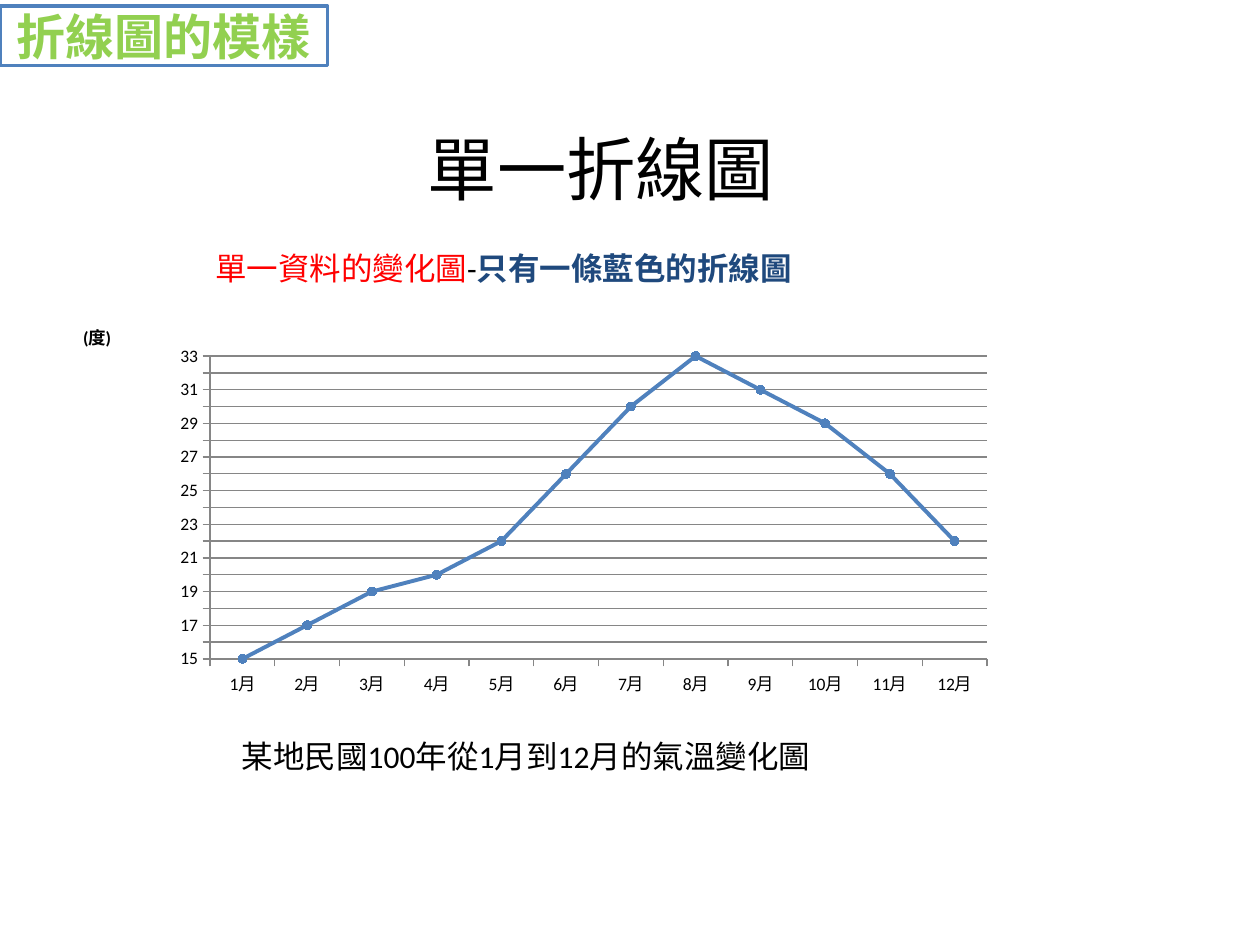
from dataclasses import dataclass

from lxml import etree
from pptx import Presentation
from pptx.chart.data import CategoryChartData
from pptx.dml.color import RGBColor
from pptx.enum.chart import XL_CHART_TYPE, XL_LEGEND_POSITION, XL_MARKER_STYLE, XL_TICK_MARK
from pptx.enum.shapes import MSO_SHAPE
from pptx.enum.text import MSO_ANCHOR, MSO_AUTO_SIZE, PP_ALIGN
from pptx.oxml.ns import qn
from pptx.util import Inches, Pt

LINE_MARKERS = XL_CHART_TYPE.LINE_MARKERS
CIRCLE = XL_MARKER_STYLE.CIRCLE
OUTSIDE = XL_TICK_MARK.OUTSIDE
RECTANGLE = MSO_SHAPE.RECTANGLE
TOP, MIDDLE = MSO_ANCHOR.TOP, MSO_ANCHOR.MIDDLE
NO_FIT, GROW = MSO_AUTO_SIZE.NONE, MSO_AUTO_SIZE.SHAPE_TO_FIT_TEXT
CENTER = PP_ALIGN.CENTER


@dataclass(frozen=True)
class Theme:
    font: str = "Calibri"
    label_font: str = "Noto Sans CJK JP"
    black: RGBColor = RGBColor(0, 0, 0)
    white: RGBColor = RGBColor(255, 255, 255)
    red: RGBColor = RGBColor(255, 0, 0)
    navy: RGBColor = RGBColor(0x1F, 0x49, 0x7D)
    blue: RGBColor = RGBColor(0x4F, 0x81, 0xBD)
    green: RGBColor = RGBColor(0x92, 0xD0, 0x50)
    gray: RGBColor = RGBColor(0x86, 0x86, 0x86)
    title: float = 39.6
    label: float = 28
    body: float = 18
    axis: float = 10


THEME = Theme()
TEMPERATURES = [15, 17, 19, 20, 22, 26, 30, 33, 31, 29, 26, 22]
MONTHS = [f"{month}月" for month in range(1, 13)]


def box(*lengths):
    return [Inches(length) for length in lengths]


def format_font(font, size, color, bold=False, name=THEME.font):
    for key, value in {"size": Pt(size), "bold": bold, "name": name}.items():
        setattr(font, key, value)
    font.color.rgb = color


def add_run(p, text, size, color, **options):
    r = p.add_run()
    r.text = text
    format_font(r.font, size, color, **options)


def format_frame(tf, **values):
    for key, value in {"word_wrap": True, **values}.items():
        setattr(tf, key, value)


def format_line(line, color, width):
    line.color.rgb = color
    line.width = Pt(width)


def set_title(s, text):
    sp = s.shapes.title
    sp.left, sp.top, sp.width, sp.height = box(0.27, 0.44, 9, 1.25)
    format_frame(sp.text_frame, auto_size=NO_FIT, vertical_anchor=TOP,
                 margin_top=Inches(0.56), margin_bottom=0)
    p = sp.text_frame.paragraphs[0]
    p.alignment = CENTER
    add_run(p, text, THEME.title, THEME.black)


def add_text(s, place, runs):
    tf = s.shapes.add_textbox(*box(*place)).text_frame
    format_frame(tf, auto_size=GROW)
    for text, color, bold in runs:
        add_run(tf.paragraphs[0], text, THEME.body, color, bold=bold)


def add_label(s, place, text):
    sp = s.shapes.add_shape(RECTANGLE, *box(*place))
    sp.shadow.inherit = False
    sp.fill.solid()
    sp.fill.fore_color.rgb = THEME.white
    format_line(sp.line, THEME.blue, 2)
    format_frame(sp.text_frame, vertical_anchor=MIDDLE)
    p = sp.text_frame.paragraphs[0]
    p.alignment = CENTER
    add_run(p, text, THEME.label, THEME.green, bold=True, name=THEME.label_font)


def set_layout(parent, index, values):
    """Give a chart part a manual layout as fractions of the chart."""
    for old in parent.findall(qn("c:layout")):
        parent.remove(old)
    layout = etree.Element(qn("c:layout"))
    manual = etree.SubElement(layout, qn("c:manualLayout"))
    for tag, value in values.items():
        etree.SubElement(manual, qn(f"c:{tag}")).set("val", str(value))
    parent.insert(index, layout)


def add_axis_title(axis, text):
    title = axis.axis_title
    p = title.text_frame.paragraphs[0]
    add_run(p, text, THEME.axis, THEME.black, bold=True)
    body = next(title.element.iter(qn("a:bodyPr")))
    body.set("rot", "0")
    body.set("vert", "horz")
    set_layout(title.element, 1,
               {"xMode": "edge", "yMode": "edge", "x": 0.02, "y": 0.04})


def add_temperature_chart(s, place):
    data = CategoryChartData()
    data.categories = MONTHS
    data.add_series("Series 1", TEMPERATURES)
    chart = s.shapes.add_chart(LINE_MARKERS, *box(*place), data).chart
    chart.has_legend = False
    chart.has_title = False
    format_font(chart.font, THEME.axis, THEME.black)

    # Axes
    for axis in (chart.category_axis, chart.value_axis):
        axis.major_tick_mark = OUTSIDE
        format_line(axis.format.line, THEME.gray, 0.75)
    axis = chart.value_axis
    scale = {"minimum_scale": 15, "maximum_scale": 33, "major_unit": 1,
             "has_major_gridlines": True}
    for key, value in scale.items():
        setattr(axis, key, value)
    format_line(axis.major_gridlines.format.line, THEME.gray, 0.75)
    add_axis_title(axis, "(度)")

    # Plot and series
    plot_area = next(chart.element.iter(qn("c:plotArea")))
    set_layout(plot_area, 0, {
        "layoutTarget": "inner", "xMode": "edge", "yMode": "edge",
        "x": 0.146, "y": 0.131, "w": 0.752, "h": 0.756})
    chart.plots[0].vary_by_categories = False
    series = chart.plots[0].series[0]
    series.smooth = False
    format_line(series.format.line, THEME.blue, 2.25)
    marker = series.marker
    marker.style, marker.size = CIRCLE, 5
    marker.format.fill.solid()
    marker.format.fill.fore_color.rgb = THEME.blue
    format_line(marker.format.line, THEME.blue, 0.75)


def main():
    prs = Presentation()
    prs.slide_width, prs.slide_height = box(10, 7.5)
    s = prs.slides.add_slide(prs.slide_layouts[5])

    # Heading and description
    set_title(s, "單一折線圖")
    add_text(s, (1.61, 1.93, 6.46, 0.4), [
        ("單一資料的變化圖", THEME.red, False),
        ("-", THEME.black, False),
        ("只有一條藍色的折線圖", THEME.navy, True),
    ])

    # Chart and caption
    add_temperature_chart(s, (0.47, 2.41, 8.2, 3.18))
    add_text(s, (1.82, 5.8, 5.43, 0.71),
             [("某地民國100年從1月到12月的氣溫變化圖", THEME.black, False)])

    # Corner label
    add_label(s, (0, 0.05, 2.6, 0.47), "折線圖的模樣")
    prs.save("out.pptx")


if __name__ == "__main__":
    main()
